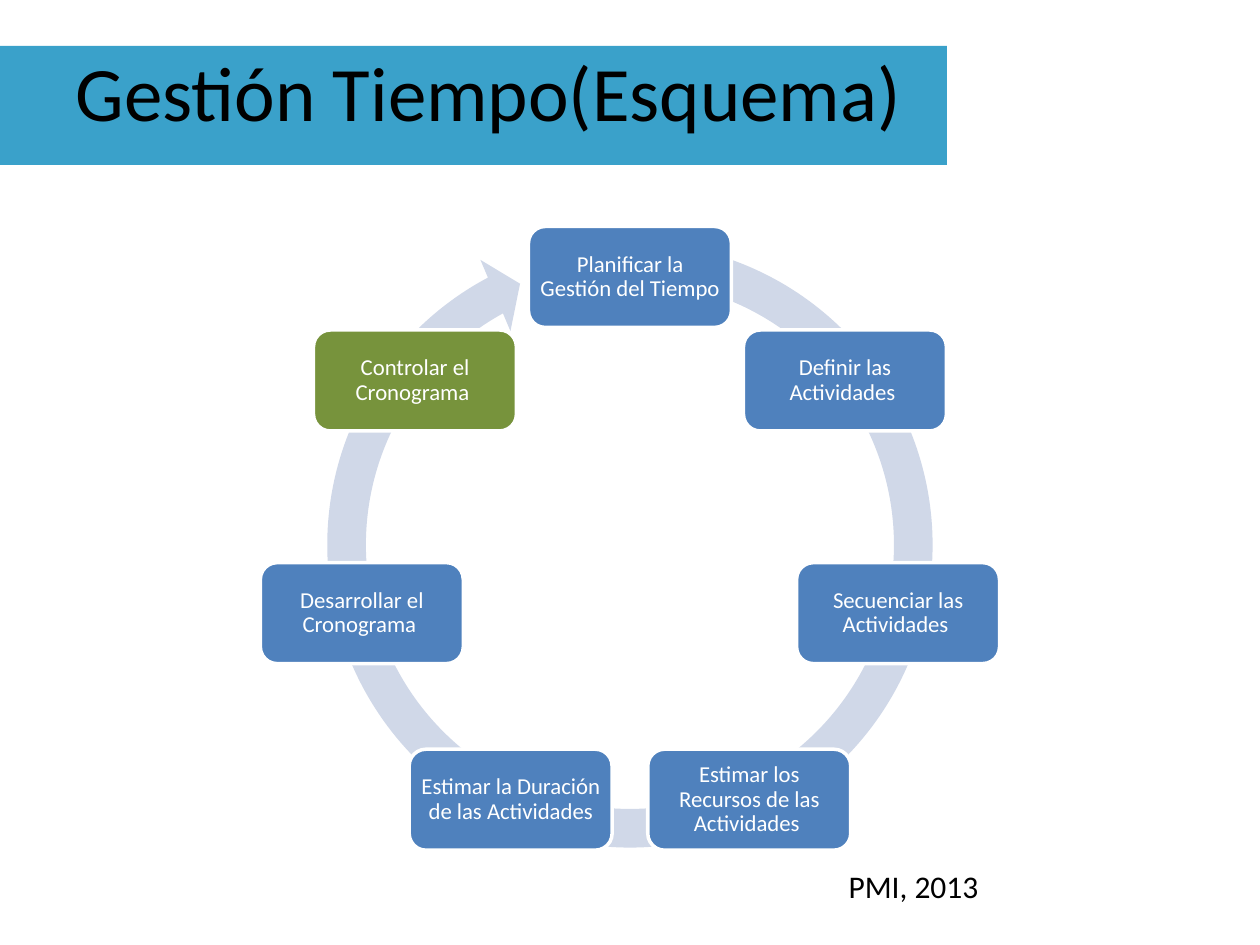
import math

import pptx
import pptx.dml.color
import pptx.enum.shapes
import pptx.enum.text
import pptx.util

RGB = pptx.dml.color.RGBColor
SHAPE = pptx.enum.shapes.MSO_SHAPE
ALIGN = pptx.enum.text.PP_ALIGN
ANCHOR = pptx.enum.text.MSO_ANCHOR

BLACK = RGB(0x00, 0x00, 0x00)
WHITE = RGB(0xFF, 0xFF, 0xFF)
BAND = RGB(0x3A, 0xA1, 0xCA)
RING = RGB(0xD0, 0xD8, 0xE8)
BLUE = RGB(0x4F, 0x81, 0xBD)
GREEN = RGB(0x77, 0x93, 0x3C)

TITLE = "Gestión Tiempo(Esquema)"
SOURCE = "PMI, 2013"
STEPS = [
    ("Planificar la Gestión del Tiempo", BLUE),
    ("Definir las Actividades ", BLUE),
    ("Secuenciar las Actividades ", BLUE),
    ("Estimar los Recursos de las Actividades ", BLUE),
    ("Estimar la Duración de las Actividades", BLUE),
    ("Desarrollar el Cronograma ", BLUE),
    ("Controlar el Cronograma ", GREEN),
]
RING_ADJUSTMENTS = [0.06, 3.31, 145, 169.59, 0.06]
CENTER_X, CENTER_Y, RADIUS = 630, 552, 275
STEP_W, STEP_H = 203, 101


def px(n):
    return round(n * 914400 / 126)


def set_text(sp, text, size, color=BLACK, align=ALIGN.CENTER,
             anchor=ANCHOR.TOP, inset=None, line_spacing=None):
    tf = sp.text_frame
    tf.word_wrap = True
    tf.auto_size = pptx.enum.text.MSO_AUTO_SIZE.NONE
    tf.vertical_anchor = anchor
    if inset is not None:
        tf.margin_left = tf.margin_right = px(inset)
        tf.margin_top = tf.margin_bottom = px(inset)
    p = tf.paragraphs[0]
    p.alignment = align
    if line_spacing:
        p.line_spacing = line_spacing
    r = p.add_run()
    r.text = text
    r.font.name = "Calibri"
    r.font.size = pptx.util.Pt(size)
    r.font.color.rgb = color


def add_shape(s, kind, box, fill, line=None):
    sp = s.shapes.add_shape(kind, *map(px, box))
    sp.shadow.inherit = False
    sp.fill.solid()
    sp.fill.fore_color.rgb = fill
    if line is None:
        sp.line.fill.background()
    else:
        sp.line.color.rgb = line
        sp.line.width = pptx.util.Pt(2)
    return sp


def main():
    prs = pptx.Presentation()
    prs.slide_width, prs.slide_height = px(1260), px(945)
    s = prs.slides.add_slide(prs.slide_layouts[5])

    title = s.shapes.title
    title.left, title.top, title.width, title.height = map(px, (63, 38, 1134, 158))
    set_text(title, TITLE, 44, align=ALIGN.LEFT)
    band = add_shape(s, SHAPE.RECTANGLE, (0, 46, 947, 119), BAND)
    title.element.addprevious(band.element)

    ring = add_shape(s, SHAPE.CIRCULAR_ARROW, (308, 223, 644, 644), RING)
    for i, value in enumerate(RING_ADJUSTMENTS):
        ring.adjustments[i] = value

    for i, (text, fill) in enumerate(STEPS):
        angle = 2 * math.pi * i / len(STEPS)
        x = CENTER_X + RADIUS * math.sin(angle) - STEP_W / 2
        y = CENTER_Y - RADIUS * math.cos(angle) - STEP_H / 2
        step = add_shape(s, SHAPE.ROUNDED_RECTANGLE, (x, y, STEP_W, STEP_H), fill, WHITE)
        set_text(step, text, 13, color=WHITE, anchor=ANCHOR.MIDDLE,
                 inset=6, line_spacing=0.9)

    source = s.shapes.add_textbox(*map(px, (672, 861, 483, 50)))
    set_text(source, SOURCE, 18)

    prs.save("out.pptx")


if __name__ == "__main__":
    main()
